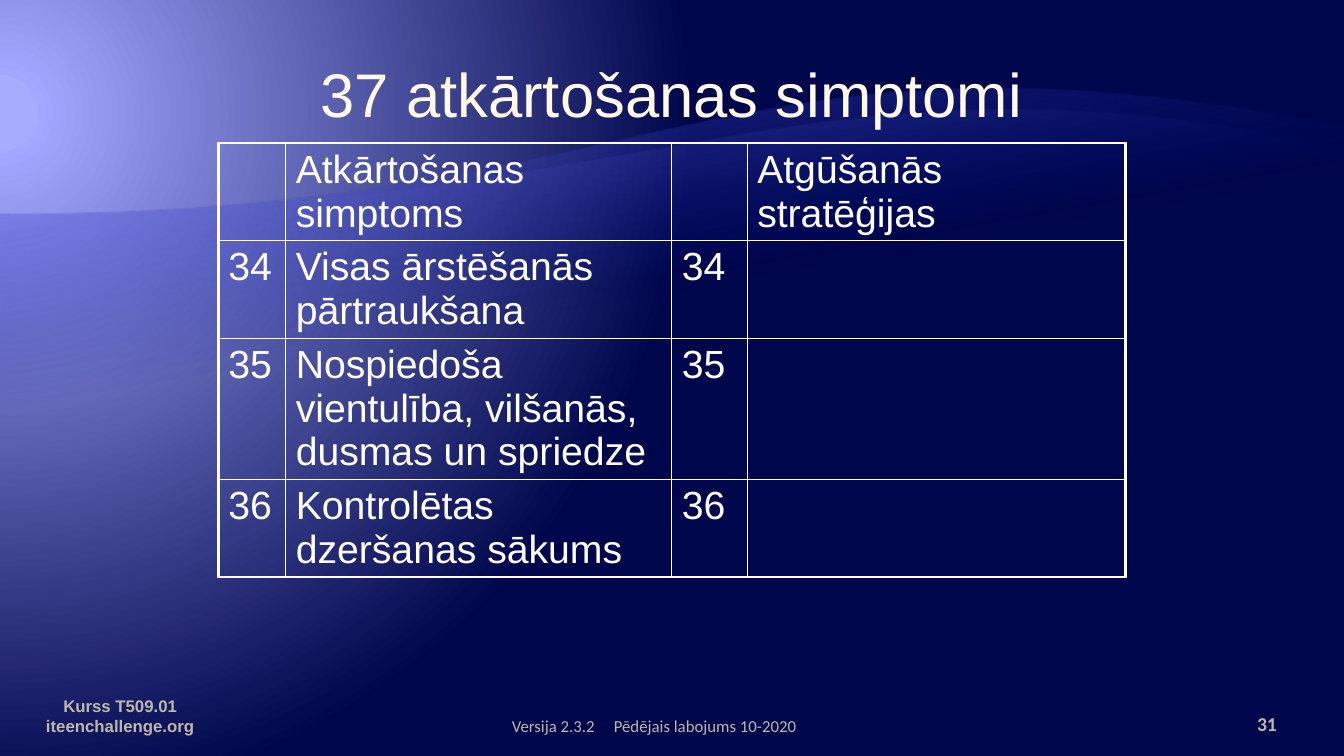
from pptx import Presentation
from pptx.dml.color import RGBColor
from pptx.enum.text import MSO_ANCHOR, PP_ALIGN
from pptx.oxml import parse_xml
from pptx.oxml.ns import nsdecls
from pptx.util import Cm, Pt

LEFT, CENTER, RIGHT = PP_ALIGN.LEFT, PP_ALIGN.CENTER, PP_ALIGN.RIGHT
MIDDLE, BOTTOM = MSO_ANCHOR.MIDDLE, MSO_ANCHOR.BOTTOM

COLORS = {
    "title": "FFF9E5", "white": "FFFFFF", "footer": "BDB8A9",
    "glow": "A8ACFF", "lilac": "A3A7FF", "night": "00064B",
    "blue": "000D9E", "violet": "797FFF",
}
WIDTH, HEIGHT = 33.87, 19.05
WAVE_BOTTOM = 18.62
STEPS = 48

ROWS = [
    ("", "Atkārtošanas simptoms", "", "Atgūšanās stratēģijas"),
    ("34", "Visas ārstēšanās pārtraukšana", "34", ""),
    ("35", "Nospiedoša vientulība, vilšanās, dusmas un spriedze", "35", ""),
    ("36", "Kontrolētas dzeršanas sākums", "36", ""),
]
COL_WIDTHS = (1.7, 9.73, 1.9, 9.53)
ROW_HEIGHTS = (2.46, 2.46, 3.55, 2.46)


def write(tf, text, size=12, color="white", font="Arial", bold=False,
          align=LEFT, anchor=None):
    """Put one formatted paragraph into a text frame."""
    tf.word_wrap = True
    if anchor is not None:
        tf.vertical_anchor = anchor
    p = tf.paragraphs[0]
    p.text = text
    p.alignment = align
    for r in p.runs:
        r.font.size, r.font.name, r.font.bold = Pt(size), font, bold
        r.font.color.rgb = RGBColor.from_string(COLORS[color])
    return p


def set_gradient(element, stops, direction):
    """Swap the first solid fill for a gradient of (position, colour, opacity)."""
    gs = "".join(
        f'<a:gs pos="{pos * 1000}"><a:srgbClr val="{COLORS[color]}">'
        f'<a:alpha val="{opacity * 1000}"/></a:srgbClr></a:gs>'
        for pos, color, opacity in stops)
    solid = element.xpath(".//a:solidFill")[0]
    solid.getparent().replace(solid, parse_xml(
        f'<a:gradFill {nsdecls("a")} rotWithShape="1">'
        f"<a:gsLst>{gs}</a:gsLst>{direction}</a:gradFill>"))


def add_background(slide):
    slide.background.fill.solid()
    slide.background.fill.fore_color.rgb = RGBColor.from_string(COLORS["night"])
    set_gradient(
        slide.element,
        [(5, "glow", 100), (5, "lilac", 100), (90, "night", 100)],
        '<a:path path="circle"><a:fillToRect l="20000" t="30000" '
        'r="135000" b="100000"/></a:path>')


def add_wave(slide, curve, color, opacity, level):
    """Draw the area under a cubic curve, behind the other objects."""
    points = []
    for i in range(STEPS + 1):
        t = i / STEPS
        weights = ((1 - t) ** 3, 3 * t * (1 - t) ** 2, 3 * t * t * (1 - t), t ** 3)
        points.append(tuple(
            Cm(sum(w * pt[axis] for w, pt in zip(weights, curve)))
            for axis in (0, 1)))
    builder = slide.shapes.build_freeform(Cm(0), Cm(WAVE_BOTTOM))
    builder.add_line_segments(points + [(Cm(WIDTH), Cm(WAVE_BOTTOM))], close=True)
    sp = builder.convert_to_shape()
    sp.shadow.inherit = False
    sp.line.fill.background()
    sp.fill.solid()
    sp.fill.fore_color.rgb = RGBColor.from_string(COLORS[color])
    set_gradient(sp.element, [(65, "blue", 0), (100, color, opacity)],
                 '<a:lin ang="15600000" scaled="0"/>')
    slide.shapes.element.insert(2 + level, sp.element)


def set_borders(cell, widths):
    tc_pr = cell._tc.get_or_add_tcPr()
    for i, (side, width) in enumerate(widths.items()):
        tc_pr.insert(i, parse_xml(
            f'<a:ln{side} {nsdecls("a")} w="{Pt(width)}"><a:solidFill>'
            f'<a:srgbClr val="{COLORS["white"]}"/></a:solidFill></a:ln{side}>'))


def add_symptom_table(slide):
    last_row, last_col = len(ROWS) - 1, len(COL_WIDTHS) - 1
    table = slide.shapes.add_table(
        len(ROWS), len(COL_WIDTHS), Cm(5.5), Cm(3.6),
        Cm(sum(COL_WIDTHS)), Cm(sum(ROW_HEIGHTS))).table
    table.first_row = table.horz_banding = False
    for col, width in zip(table.columns, COL_WIDTHS):
        col.width = Cm(width)
    for i, (row, height) in enumerate(zip(table.rows, ROW_HEIGHTS)):
        row.height = Cm(height)
        for j, cell in enumerate(row.cells):
            cell.fill.background()
            # Thick frame, thin inner lines
            outer = {"L": j == 0, "R": j == last_col,
                     "T": i == 0, "B": i == last_row}
            set_borders(cell, {s: 2.25 if o else 1 for s, o in outer.items()})
            write(cell.text_frame, ROWS[i][j], size=28)


def add_footer(slide, text, left, width, inset_left=0.25, inset_right=0.25, **fmt):
    tf = slide.shapes.add_textbox(
        Cm(left), Cm(17.65), Cm(width), Cm(1.02)).text_frame
    tf.margin_left, tf.margin_right = Cm(inset_left), Cm(inset_right)
    return write(tf, text, color="footer", anchor=BOTTOM, **fmt)


def main():
    prs = Presentation()
    prs.slide_width, prs.slide_height = Cm(WIDTH), Cm(HEIGHT)
    slide = prs.slides.add_slide(prs.slide_layouts[5])

    # Backdrop
    add_background(slide)
    add_wave(slide, [(0, 5.41), (16.93, 5.41), (18.1, 0.13), (WIDTH, 3.18)],
             "violet", 55, 0)
    add_wave(slide, [(0, 5.41), (16.93, 5.41), (20.25, 0.79), (WIDTH, 3.73)],
             "lilac", 30, 1)

    # Title
    title = slide.shapes.title
    title.left, title.top = Cm(5.5), Cm(0.76)
    title.width, title.height = Cm(22.86), Cm(3.18)
    write(title.text_frame, "37 atkārtošanas simptomi", size=44,
          color="title", align=CENTER, anchor=MIDDLE)

    # Table
    add_symptom_table(slide)

    # Footer
    add_footer(slide, "31", 30.2, 1.98, inset_right=0, size=14,
               font="Calibri", bold=True, align=RIGHT)
    add_footer(slide, "Kurss T509.01\viteenchallenge.org", -0.64, 7.34,
               bold=True, align=CENTER)
    p = add_footer(slide, "Versija 2.3.2\tPēdējais labojums 10-2020", 12.9, 10.16,
                   inset_left=0, font="Calibri")
    p._p.get_or_add_pPr().append(parse_xml(
        f'<a:tabLst {nsdecls("a")}><a:tab pos="{Cm(2.57)}" algn="l"/></a:tabLst>'))

    prs.save("out.pptx")


if __name__ == "__main__":
    main()
